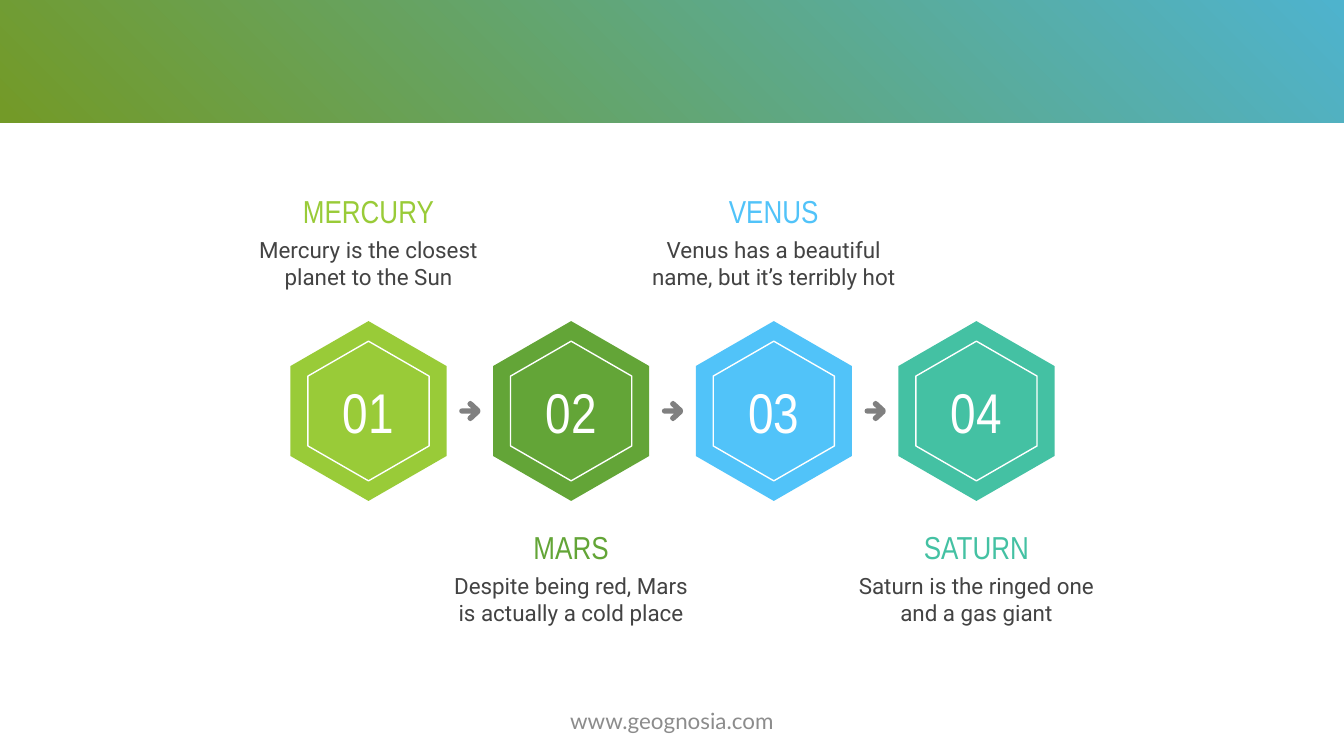
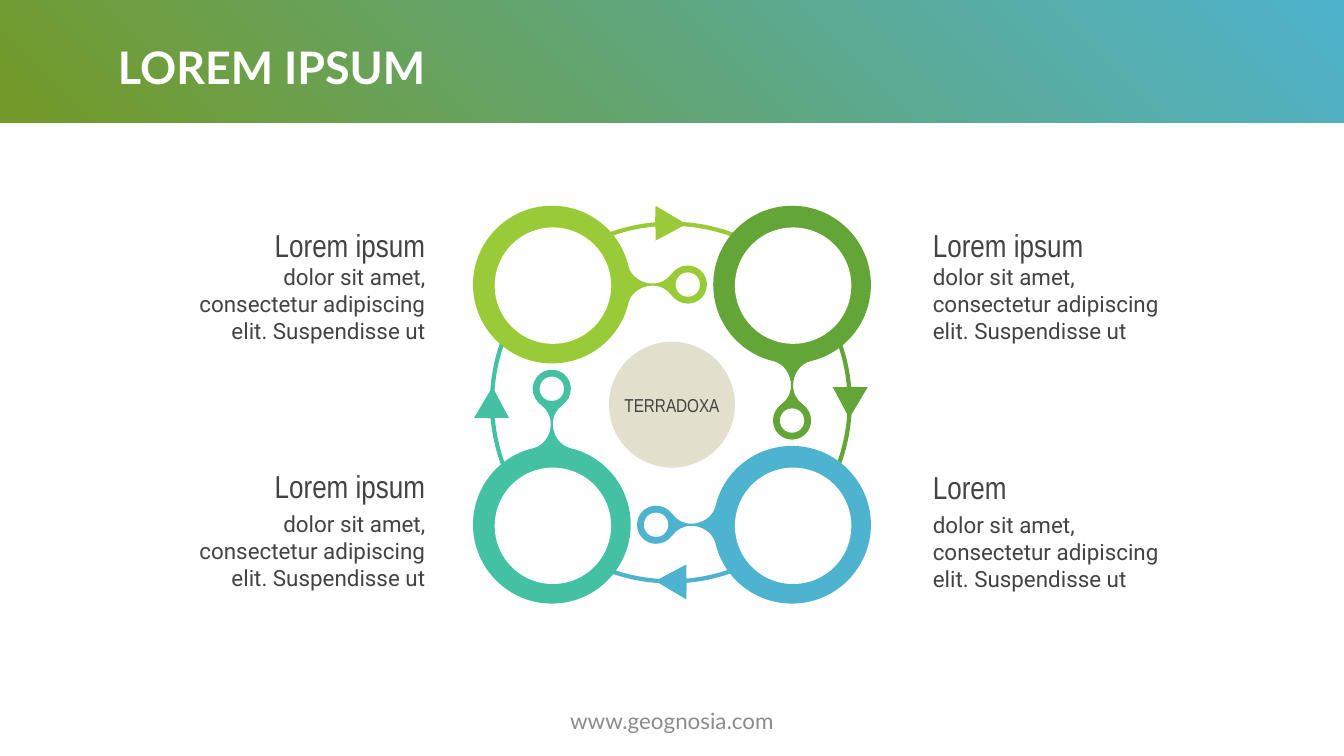
"""Build a planet timeline slide and a four-part cycle slide."""
import dataclasses
import math

import pptx
import pptx.dml.color
import pptx.enum.shapes
import pptx.enum.text
import pptx.oxml.ns
import pptx.util

Cm = pptx.util.Cm
ALIGN = pptx.enum.text.PP_ALIGN


@dataclasses.dataclass(frozen=True)
class Theme:
    """Colours, fonts and type sizes shared by the slides."""
    lime: str = "99CB38"
    green: str = "63A537"
    sky: str = "51C3F9"
    blue: str = "4EB3CF"
    teal: str = "44C1A3"
    sand: str = "E2DFCC"
    white: str = "FFFFFF"
    ink: str = "434343"
    arrow: str = "808080"
    footer: str = "8C8C8C"
    band_start: str = "739A28"
    display: str = "Arial Narrow"
    body: str = "Roboto"
    brand: str = "Lato"
    number_size: int = 30
    title_size: int = 24
    heading_size: int = 17
    body_size: int = 12
    label_size: int = 10


THEME = Theme()
ARROW_HALF = [
    (-0.2, 0), (-0.2, -0.03, -0.18, -0.05, -0.15, -0.05), (0.03, -0.05), (-0.03, -0.1),
    (-0.05, -0.12, -0.05, -0.15, -0.03, -0.17), (-0.01, -0.2, 0.03, -0.2, 0.05, -0.17),
    (0.19, -0.04), (0.2, -0.02, 0.2, -0.01, 0.2, 0),
]
LOBE_HALF = [
    (-1.49, 0), (-1.49, -0.82, -0.82, -1.49, 0, -1.49),
    (0.71, -1.49, 1.3, -1, 1.45, -0.34), (1.5, -0.15, 1.7, -0.02, 1.9, -0.02),
    (2.06, -0.02, 2.18, -0.09, 2.26, -0.2), (2.34, -0.3, 2.44, -0.36, 2.57, -0.36),
    (2.77, -0.36, 2.93, -0.2, 2.93, 0),
]
PLANETS = [
    ("MERCURY", "Mercury is the closest planet to the Sun", THEME.lime),
    ("MARS", "Despite being red, Mars is actually a cold place", THEME.green),
    ("VENUS", "Venus has a beautiful name, but it’s terribly hot", THEME.sky),
    ("SATURN", "Saturn is the ringed one and a gas giant", THEME.teal),
]
CYCLE_COLORS = [THEME.lime, THEME.green, THEME.blue, THEME.teal]
ARC_JOINTS = [-39, 47, 137, 220, 321]
CYCLE_TEXT = "dolor sit amet, consectetur adipiscing elit. Suspendisse ut"
LEFT_COLUMN = (3.41, 4.88, ALIGN.RIGHT)
RIGHT_COLUMN = (17.38, 5.05, ALIGN.LEFT)
CAPTIONS = [
    ("Lorem ipsum", LEFT_COLUMN, 4.63, 5.74),
    ("Lorem ipsum", RIGHT_COLUMN, 4.63, 5.74),
    ("Lorem", RIGHT_COLUMN, 9.21, 10.42),
    ("Lorem ipsum", LEFT_COLUMN, 9.18, 10.41),
]


def rgb(color):
    """Return the colour object for a hex value."""
    return pptx.dml.color.RGBColor.from_string(color)


def write(shape, text, *, size, font=THEME.display, color=THEME.ink,
          align=ALIGN.CENTER, bold=False, wrap=True, inset=0.25):
    """Set a formatted line of text in a shape."""
    frame = shape.text_frame
    frame.word_wrap = wrap
    frame.vertical_anchor = pptx.enum.text.MSO_ANCHOR.MIDDLE
    frame.margin_left = frame.margin_right = Cm(inset)
    frame.margin_top = frame.margin_bottom = Cm(inset)
    paragraph = frame.paragraphs[0]
    paragraph.alignment = align
    run = paragraph.add_run()
    run.text = text
    run.font.name = font
    run.font.size = pptx.util.Pt(size)
    run.font.bold = bold
    run.font.color.rgb = rgb(color)


def add_text(slide, box, text, **text_format):
    """Add a text box at left, top, width, height."""
    write(slide.shapes.add_textbox(*map(Cm, box)), text, **text_format)


def paint(shape, fill=None, line=None):
    """Give a shape a plain fill or a thin outline."""
    shape.shadow.inherit = False
    if fill:
        shape.fill.solid()
        shape.fill.fore_color.rgb = rgb(fill)
    else:
        shape.fill.background()
    if line:
        shape.line.color.rgb = rgb(line)
        shape.line.width = pptx.util.Pt(0.75)
    else:
        shape.line.fill.background()
    return shape


def pairs(segment):
    """Split a segment into its points."""
    return list(zip(segment[::2], segment[1::2]))


def add_outline(slide, center, segments, **colors):
    """Add a closed freeform of lines and curves relative to a centre."""
    start, *rest = [(Cm(center[0] + x), Cm(center[1] + y))
                    for segment in segments for x, y in pairs(segment)]
    builder = slide.shapes.build_freeform(*start)
    builder.add_line_segments(rest, close=True)
    shape = builder.convert_to_shape()
    lines = iter(list(shape.element.iter(pptx.oxml.ns.qn("a:lnTo"))))
    for segment in segments[1:]:
        first, *others = [next(lines) for _ in pairs(segment)]
        for line in others:
            first.append(line[0])
            line.getparent().remove(line)
        if others:
            first.tag = pptx.oxml.ns.qn("a:cubicBezTo")
    return paint(shape, **colors)


def add_disc(slide, center, radius, fill):
    """Add a filled circle around a centre."""
    box = (center[0] - radius, center[1] - radius, 2 * radius, 2 * radius)
    oval = pptx.enum.shapes.MSO_SHAPE.OVAL
    return paint(slide.shapes.add_shape(oval, *map(Cm, box)), fill=fill)


def mirrored(half):
    """Close half an outline with its mirror image below the axis."""
    back = []
    for before, segment in zip(half[-2::-1], half[:0:-1]):
        points = pairs(segment)[-2::-1] + [before[-2:]]
        back.append(tuple(value for x, y in points for value in (x, -y)))
    return half + back


def turned(segments, quarters):
    """Turn segments clockwise by quarter turns."""
    for _ in range(quarters):
        segments = [tuple(value for x, y in pairs(segment) for value in (-y, x))
                    for segment in segments]
    return segments


def hexagon(width, height):
    """Return the corners of an upright hexagon."""
    x, y = width / 2, height / 2
    return [(0, -y), (-x, -y / 2), (-x, y / 2), (0, y), (x, y / 2), (x, -y / 2)]


def arc(radius, start, end):
    """Return an arc's start and curve, in degrees clockwise from the top."""
    first, last = math.radians(start), math.radians(end)
    reach = 4 / 3 * math.tan((last - first) / 4)
    x, y = radius * math.sin(first), -radius * math.cos(first)
    to_x, to_y = radius * math.sin(last), -radius * math.cos(last)
    return [(x, y), (x - reach * y, y + reach * x,
                     to_x + reach * to_y, to_y - reach * to_x, to_x, to_y)]


def arc_arrow(start, end):
    """Return a thin arc with an arrowhead near its top."""
    outer, inner = 3.42, 3.34
    return (arc(outer, start, -5) + [(-0.29, -3.72)] + arc(outer, 3.8, end)
            + arc(inner, end, 3.8) + [(-0.29, -3.06)] + arc(inner, -5, start))


def add_header(slide, box, title=None):
    """Draw the gradient band and its title."""
    left, top, width, height = box
    rectangle = pptx.enum.shapes.MSO_SHAPE.RECTANGLE
    band = paint(slide.shapes.add_shape(rectangle, *map(Cm, box)))
    band.fill.gradient()
    band.fill.gradient_angle = 45
    stops = zip(band.fill.gradient_stops, (THEME.band_start, THEME.blue), (0.01, 1))
    for stop, color, position in stops:
        stop.color.rgb = rgb(color)
        stop.position = position
    if title:
        add_text(slide, (left + 2.08, top + 0.71, width - 4.14, 1.35), title,
                 size=THEME.title_size, font=THEME.brand, color=THEME.white,
                 align=ALIGN.LEFT, bold=True)


def add_footer(slide, box):
    """Write the web address at the foot of the slide."""
    add_text(slide, box, "www.geognosia.com", size=THEME.body_size,
             font=THEME.brand, color=THEME.footer, inset=0.1)


def add_frame(presentation, title=None):
    """Add a blank slide with the shared header and footer."""
    slide = presentation.slides.add_slide(presentation.slide_layouts[6])
    add_header(slide, (-0.1, -0.13, 25.6, 2.45), title)
    add_footer(slide, (8.41, 13.25, 8.58, 0.76))
    return slide


def add_planet(slide, center, number, planet, above):
    """Draw one numbered hexagon with its caption above or below."""
    name, text, color = planet
    x, y = center
    badge = add_outline(slide, center, hexagon(2.95, 3.4), fill=color)
    write(badge, f"{number:02}", size=THEME.number_size, color=THEME.white)
    heading = y + (-3.78 if above else 2.57)
    add_text(slide, (x - 2.43, heading - 0.8, 4.86, 1.6), name,
             size=THEME.heading_size, color=color)
    add_text(slide, (x - 2.59, heading + 0.19, 5.18, 1.6), text,
             size=THEME.body_size, font=THEME.body)
    add_outline(slide, center, hexagon(2.29, 2.64), line=THEME.white)


def add_timeline(slide, box):
    """Place the planets evenly across a box, with arrows between them."""
    left, top, width, height = box
    middle = top + height / 2
    pitch = (width - 2.95) / (len(PLANETS) - 1)
    centers = [left + 1.475 + index * pitch for index in range(len(PLANETS))]
    for index, (x, planet) in enumerate(zip(centers, PLANETS)):
        add_planet(slide, (x, middle), index + 1, planet, index % 2 == 0)
    for x in centers[1:]:
        add_outline(slide, (x - pitch / 2, middle), mirrored(ARROW_HALF),
                    fill=THEME.arrow)


def add_cycle(slide, box):
    """Draw four linked rings around a central disc."""
    left, top, width, height = box
    x, y = left + width / 2, top + height / 2
    for quarter, color in enumerate(CYCLE_COLORS):
        start, end = [joint - 90 * quarter for joint in ARC_JOINTS[quarter:quarter + 2]]
        add_outline(slide, (x - 0.02, y - 0.04), turned(arc_arrow(start, end), quarter),
                    fill=color)
    offset = width / 2 - 1.49
    for quarter, color in enumerate(CYCLE_COLORS):
        lobe = [tuple(value - offset for value in segment)
                for segment in mirrored(LOBE_HALF)]
        add_outline(slide, (x, y), turned(lobe, quarter), fill=color)
        ring, bead = turned([(-offset, -offset), (2.57 - offset, -offset)], quarter)
        add_disc(slide, (x + ring[0] + 0.02, y + ring[1] + 0.02), 1.1, THEME.white)
        add_disc(slide, (x + bead[0], y + bead[1]), 0.23, THEME.white)
    hub = add_disc(slide, (x, y), 1.19, THEME.sand)
    write(hub, "TERRADOXA", size=THEME.label_size, wrap=False, inset=0)


def add_caption(slide, column, heading, heading_middle, text_middle):
    """Write a heading and its text in a column."""
    left, width, align = column
    add_text(slide, (left, heading_middle - 0.6, width, 1.2), heading,
             size=THEME.heading_size, align=align)
    add_text(slide, (left, text_middle - 0.95, width, 1.9), CYCLE_TEXT,
             size=THEME.body_size, font=THEME.body, align=align)


def main():
    """Build both slides and save the presentation."""
    presentation = pptx.Presentation()
    presentation.slide_width = Cm(25.4)
    presentation.slide_height = Cm(14.29)
    add_timeline(add_frame(presentation), (5.49, 6.07, 14.44, 3.4))
    slide = add_frame(presentation, "LOREM IPSUM")
    add_cycle(slide, (8.94, 3.89, 7.52, 7.52))
    for heading, column, heading_middle, text_middle in CAPTIONS:
        add_caption(slide, column, heading, heading_middle, text_middle)
    presentation.save("out.pptx")


if __name__ == "__main__":
    main()
